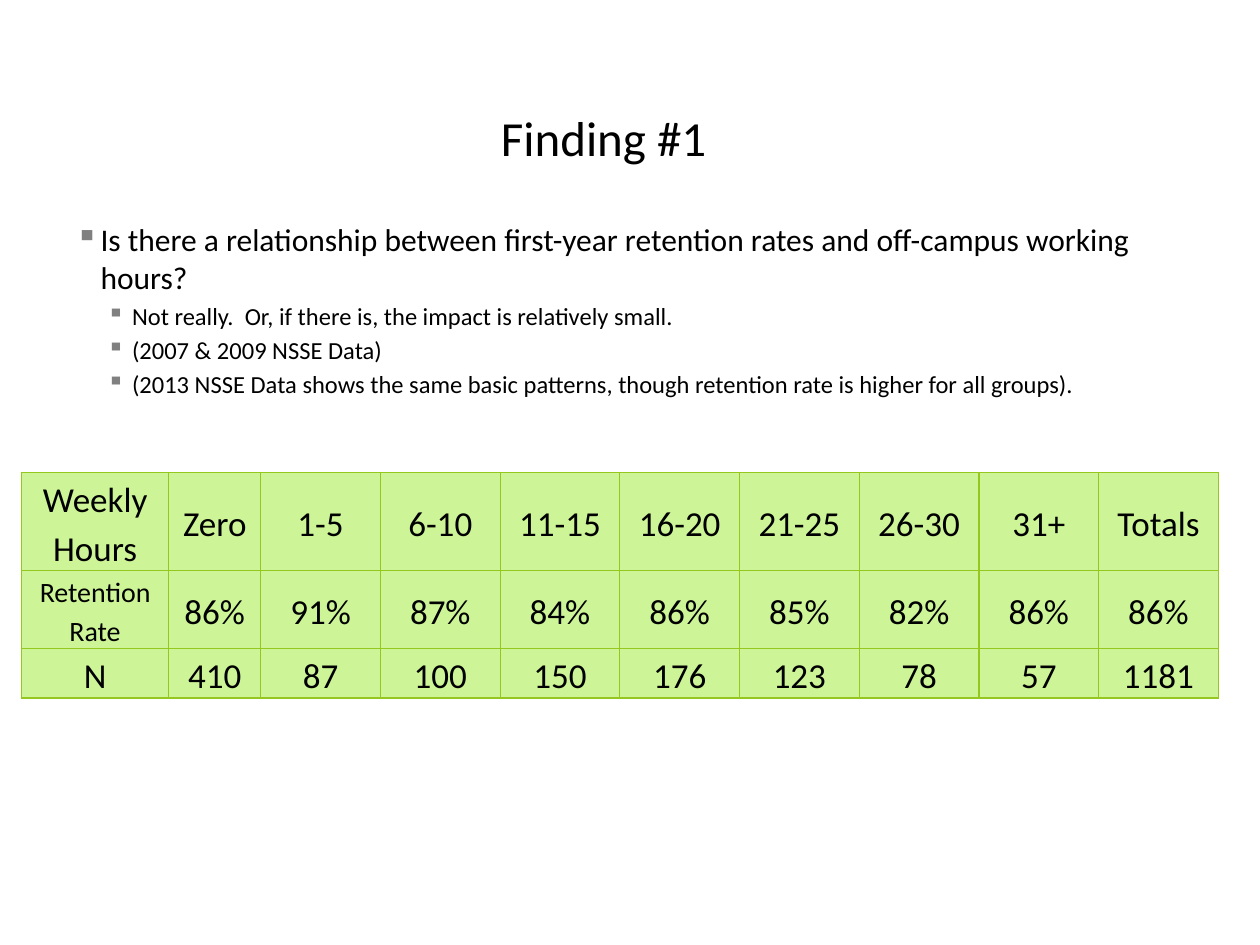
from dataclasses import dataclass

from lxml import etree
from pptx import Presentation
from pptx.dml.color import RGBColor
from pptx.enum.text import MSO_ANCHOR, PP_ALIGN
from pptx.oxml.ns import qn
from pptx.util import Inches, Pt

MIDDLE = MSO_ANCHOR.MIDDLE
LEFT, CENTER = PP_ALIGN.LEFT, PP_ALIGN.CENTER
FONT = "Calibri"
COLORS = {"ink": "000000", "mark": "808080", "fill": "CDF597", "line": "96C71E"}


@dataclass
class Point:
    text: str
    size: int = 14
    indent: float = 0.45
    before: float = 2.8


POINTS = [
    Point(
        "Is there a relationship between first-year retention rates "
        "and off-campus working hours?",
        size=18, indent=0.2, before=0,
    ),
    Point("Not really.  Or, if there is, the impact is relatively small."),
    Point("(2007 & 2009 NSSE Data)"),
    Point(
        "(2013 NSSE Data shows the same basic patterns, "
        "though retention rate is higher for all groups)."
    ),
]

ROWS = [
    ["Weekly Hours", "Zero", "1-5", "6-10", "11-15", "16-20", "21-25", "26-30", "31+", "Totals"],
    ["Retention Rate", "86%", "91%", "87%", "84%", "86%", "85%", "82%", "86%", "86%"],
    ["N", "410", "87", "100", "150", "176", "123", "78", "57", "1181"],
]
WIDTHS = [1.17, 0.73] + [0.95] * 8
HEIGHTS = [0.78, 0.62, 0.39]


def add_color(parent, color: str) -> None:
    etree.SubElement(parent, qn("a:srgbClr"), val=COLORS[color])


def write(para, text: str, *, size: int, align=LEFT, before: float = 0,
          spacing: float = 1.0, color: str = "ink") -> None:
    para.alignment = align
    para.space_before = Pt(before)
    para.line_spacing = spacing
    run = para.add_run()
    run.text = text
    run.font.name = FONT
    run.font.size = Pt(size)
    run.font.color.rgb = RGBColor.from_string(COLORS[color])


def add_box(slide, left: float, top: float, width: float, height: float):
    box = slide.shapes.add_textbox(Inches(left), Inches(top), Inches(width), Inches(height))
    frame = box.text_frame
    frame.word_wrap = True
    frame.vertical_anchor = MIDDLE
    return frame


def add_mark(para, indent: float) -> None:
    props = para._p.get_or_add_pPr()
    props.set("marL", str(Inches(indent)))
    props.set("indent", str(Inches(-0.2)))
    add_color(etree.SubElement(props, qn("a:buClr")), "mark")
    etree.SubElement(props, qn("a:buChar"), char="▪")


def add_points(frame, points: list[Point]) -> None:
    for index, point in enumerate(points):
        para = frame.add_paragraph() if index else frame.paragraphs[0]
        add_mark(para, point.indent)
        write(para, point.text, size=point.size, before=point.before)


def style_cell(cell) -> None:
    cell.vertical_anchor = MIDDLE
    cell.margin_left = cell.margin_right = Inches(0.07)
    cell.margin_top = cell.margin_bottom = 0
    props = cell._tc.get_or_add_tcPr()
    for side in ("L", "R", "T", "B"):
        line = etree.SubElement(props, qn(f"a:ln{side}"), w=str(Pt(0.75)))
        add_color(etree.SubElement(line, qn("a:solidFill")), "line")
    cell.fill.solid()
    cell.fill.fore_color.rgb = RGBColor.from_string(COLORS["fill"])


def add_grid(slide, rows: list[list[str]]) -> None:
    table = slide.shapes.add_table(
        len(rows), len(WIDTHS), Inches(0.17), Inches(3.75),
        Inches(sum(WIDTHS)), Inches(sum(HEIGHTS)),
    ).table
    for column, width in zip(table.columns, WIDTHS):
        column.width = Inches(width)
    for row, height, texts in zip(table.rows, HEIGHTS, rows):
        row.height = Inches(height)
        for cell, text in zip(row.cells, texts):
            style_cell(cell)
            size = 16 if text == "Retention Rate" else 20
            write(cell.text_frame.paragraphs[0], text, size=size, align=CENTER, spacing=1.15)


def main() -> None:
    deck = Presentation()
    deck.slide_width, deck.slide_height = Inches(10), Inches(7.5)
    slide = deck.slides.add_slide(deck.slide_layouts[6])
    add_points(add_box(slide, 0.5, 1.64, 9, 1.63), POINTS)
    title = add_box(slide, 3.25, 0.42, 3.08, 1.33)
    write(title.paragraphs[0], "Finding #1", size=28, align=CENTER)
    add_grid(slide, ROWS)
    deck.save("out.pptx")


if __name__ == "__main__":
    main()
